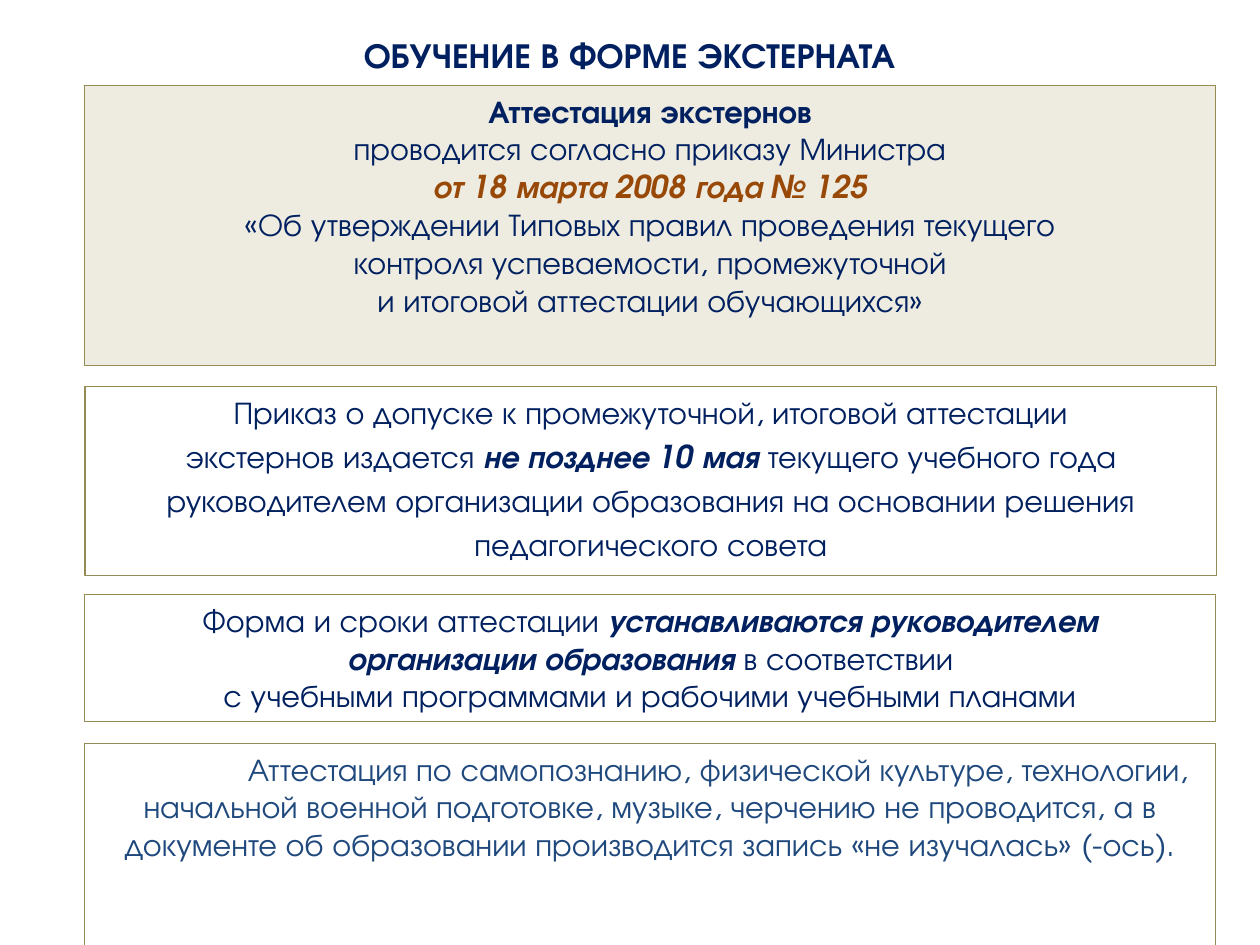
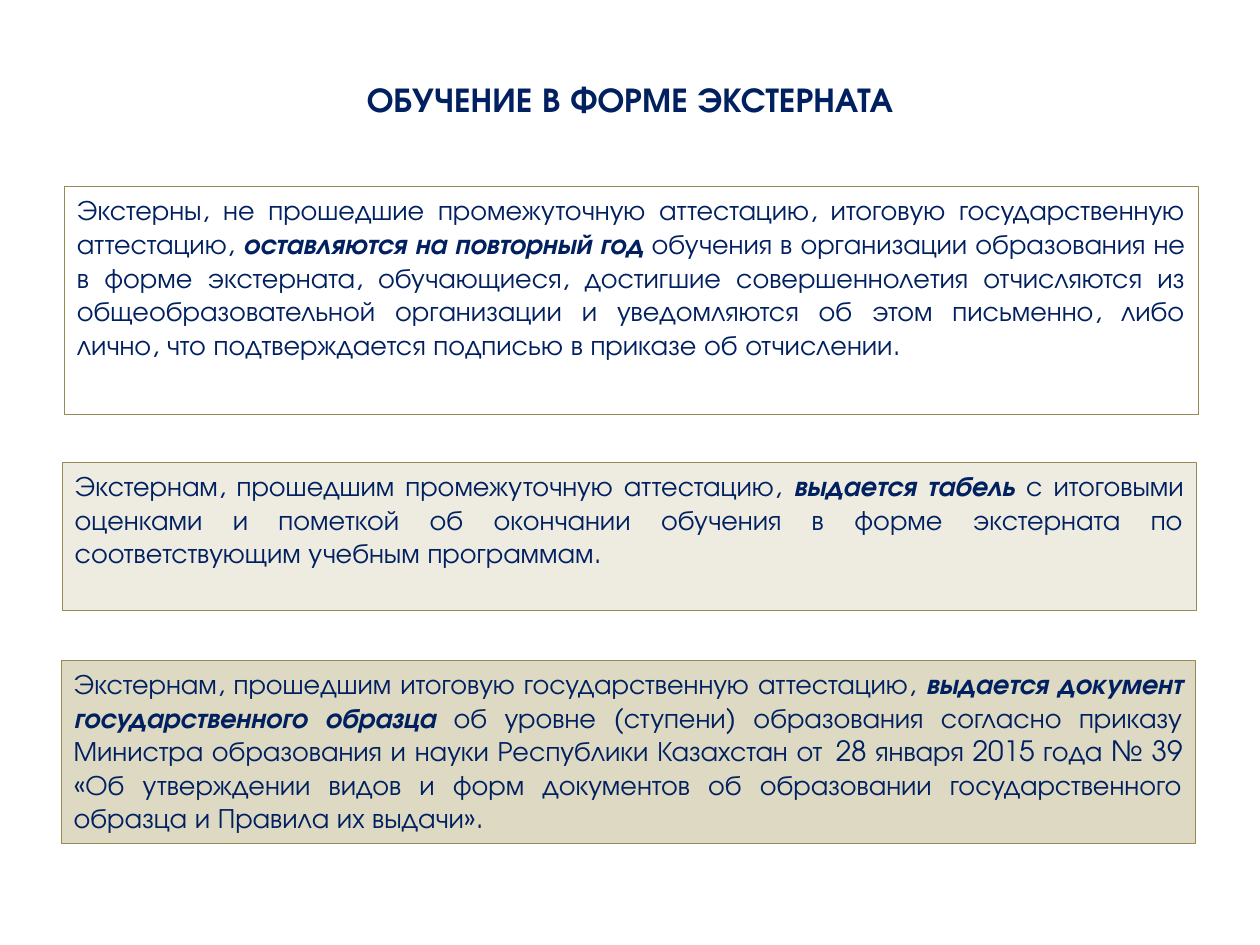
from pptx import Presentation
from pptx.dml.color import RGBColor
from pptx.enum.shapes import MSO_SHAPE
from pptx.enum.text import MSO_ANCHOR, MSO_AUTO_SIZE, PP_ALIGN
from pptx.oxml.ns import qn
from pptx.util import Pt
from lxml.etree import SubElement

FONT = "TeX Gyre Adventor"
COLORS = {"navy": "002060", "blue": "1F497D", "rust": "984807", "olive": "948A54",
          "white": "FFFFFF", "cream": "EEECE1", "sand": "DDD9C3"}
STYLES = {"plain": {}, "bold": {"bold": True}, "key": {"bold": True, "italic": True},
          "date": {"bold": True, "italic": True, "color": "rust"}, "note": {"color": "blue"}}
TITLE = "ОБУЧЕНИЕ В ФОРМЕ ЭКСТЕРНАТА"

# A paragraph is a string or a list of (text, style) runs.
SLIDES = [
    {"title": {"at": (25.2, 15.1, 669, 31.7), "size": 20},
     "size": 18, "align": PP_ALIGN.CENTER,
     "boxes": [
         {"at": (48.6, 221, 646.6, 108), "fill": "white", "body": True, "paragraphs": [
             "Приказ о допуске к промежуточной, итоговой аттестации",
             [("экстернов издается ", "plain"), ("не позднее 10 мая ", "key"),
              ("текущего учебного года", "plain")],
             "руководителем организации образования на основании решения",
             "педагогического совета"]},
         {"at": (48.2, 48.8, 646.6, 160), "fill": "cream", "paragraphs": [
             [("Аттестация экстернов", "bold")],
             "проводится согласно приказу Министра",
             [("от 18 марта 2008 года № 125", "date")],
             "«Об утверждении Типовых правил проведения текущего",
             "контроля успеваемости, промежуточной",
             "и итоговой аттестации обучающихся»"]},
         {"at": (48.2, 424.8, 646.6, 116.6), "fill": "white", "indent": 78, "paragraphs": [
             [("Аттестация по самопознанию, физической культуре, технологии, начальной "
               "военной подготовке, музыке, черчению не проводится, а в документе об "
               "образовании производится запись «не изучалась» (-ось).", "note")]]},
         {"at": (48.2, 339.8, 646.6, 72.7), "fill": None, "paragraphs": [
             [("Форма и сроки аттестации ", "plain"),
              ("устанавливаются руководителем", "key")],
             [("организации образования ", "key"), ("в соответствии", "plain")],
             "с учебными программами и рабочими учебными планами"]},
     ]},
    {"title": {"at": (36, 28.8, 648, 55.4), "size": 19.8},
     "size": 16, "align": PP_ALIGN.JUSTIFY,
     "boxes": [
         {"at": (36.7, 106.6, 648, 130.3), "fill": "white", "body": True, "paragraphs": [
             [("Экстерны, не прошедшие промежуточную аттестацию, итоговую "
               "государственную аттестацию, ", "plain"),
              ("оставляются на повторный год ", "key"),
              ("обучения в организации образования не в форме экстерната, обучающиеся, "
               "достигшие совершеннолетия отчисляются из общеобразовательной организации "
               "и уведомляются об этом письменно, либо лично, что подтверждается подписью "
               "в приказе об отчислении.", "plain")]]},
         {"at": (35.6, 264.2, 648, 84.8), "fill": "cream", "paragraphs": [
             [("Экстернам, прошедшим промежуточную аттестацию, ", "plain"),
              ("выдается табель ", "key"),
              ("с итоговыми оценками и пометкой об окончании обучения в форме экстерната "
               "по соответствующим учебным программам.", "plain")]]},
         {"at": (35, 377.4, 648, 104.5), "fill": "sand", "tab": 516, "paragraphs": [
             [("Экстернам, прошедшим итоговую государственную аттестацию, ", "plain"),
              ("выдается документ государственного образца", "key"),
              (" об уровне (ступени) образования согласно приказу Министра образования и "
               "науки Республики Казахстан от\t28 января 2015 года № 39 «Об утверждении "
               "видов и форм документов об образовании государственного образца и Правила "
               "их выдачи».", "plain")]]},
     ]},
]


def rgb(name):
    return RGBColor.from_string(COLORS[name])


def place(sp, at):
    sp.left, sp.top, sp.width, sp.height = (Pt(v) for v in at)


def add_run(p, text, size=18, color="navy", bold=False, italic=False):
    r = p.add_run()
    r.text = text
    f = r.font
    f.name, f.size, f.bold, f.italic = FONT, Pt(size), bold, italic
    f.color.rgb = rgb(color)


def write(sp, paragraphs, size, align, anchor=MSO_ANCHOR.TOP, before=0, indent=0, tab=None):
    """Fill a shape with unbulleted paragraphs."""
    tf = sp.text_frame
    tf.word_wrap, tf.auto_size, tf.vertical_anchor = True, MSO_AUTO_SIZE.NONE, anchor
    for i, runs in enumerate(paragraphs):
        p = tf.add_paragraph() if i else tf.paragraphs[0]
        p.alignment, p.space_before = align, Pt(before)
        pPr = p._p.get_or_add_pPr()
        pPr.set("marL", "0")
        pPr.set("indent", str(Pt(indent)))
        SubElement(pPr, qn("a:buNone"))
        if tab:
            stops = SubElement(pPr, qn("a:tabLst"))
            SubElement(stops, qn("a:tab"), pos=str(Pt(tab)), algn="l")
        for text, style in [(runs, "plain")] if isinstance(runs, str) else runs:
            add_run(p, text, size=size, **STYLES[style])


def add_box(s, box, size, align):
    body = box.get("body", False)
    if body:
        sp = s.placeholders[1]
    else:
        sp = s.shapes.add_shape(MSO_SHAPE.RECTANGLE, 0, 0, 0, 0)
        sp.shadow.inherit = False
    place(sp, box["at"])
    if box["fill"]:
        sp.fill.solid()
        sp.fill.fore_color.rgb = rgb(box["fill"])
    else:
        sp.fill.background()
    sp.line.color.rgb = rgb("olive")
    sp.line.width = Pt(0.75)
    write(sp, box["paragraphs"], size, align, before=0.2 * size if body else 0,
          indent=box.get("indent", 0), tab=box.get("tab"))


def main():
    prs = Presentation()
    prs.slide_width, prs.slide_height = Pt(720), Pt(540)
    for content in SLIDES:
        s = prs.slides.add_slide(prs.slide_layouts[1])
        title = content["title"]
        place(s.shapes.title, title["at"])
        write(s.shapes.title, [[(TITLE, "bold")]], title["size"], PP_ALIGN.CENTER,
              anchor=MSO_ANCHOR.MIDDLE)
        for box in content["boxes"]:
            add_box(s, box, content["size"], content["align"])
    prs.save("out.pptx")


if __name__ == "__main__":
    main()
